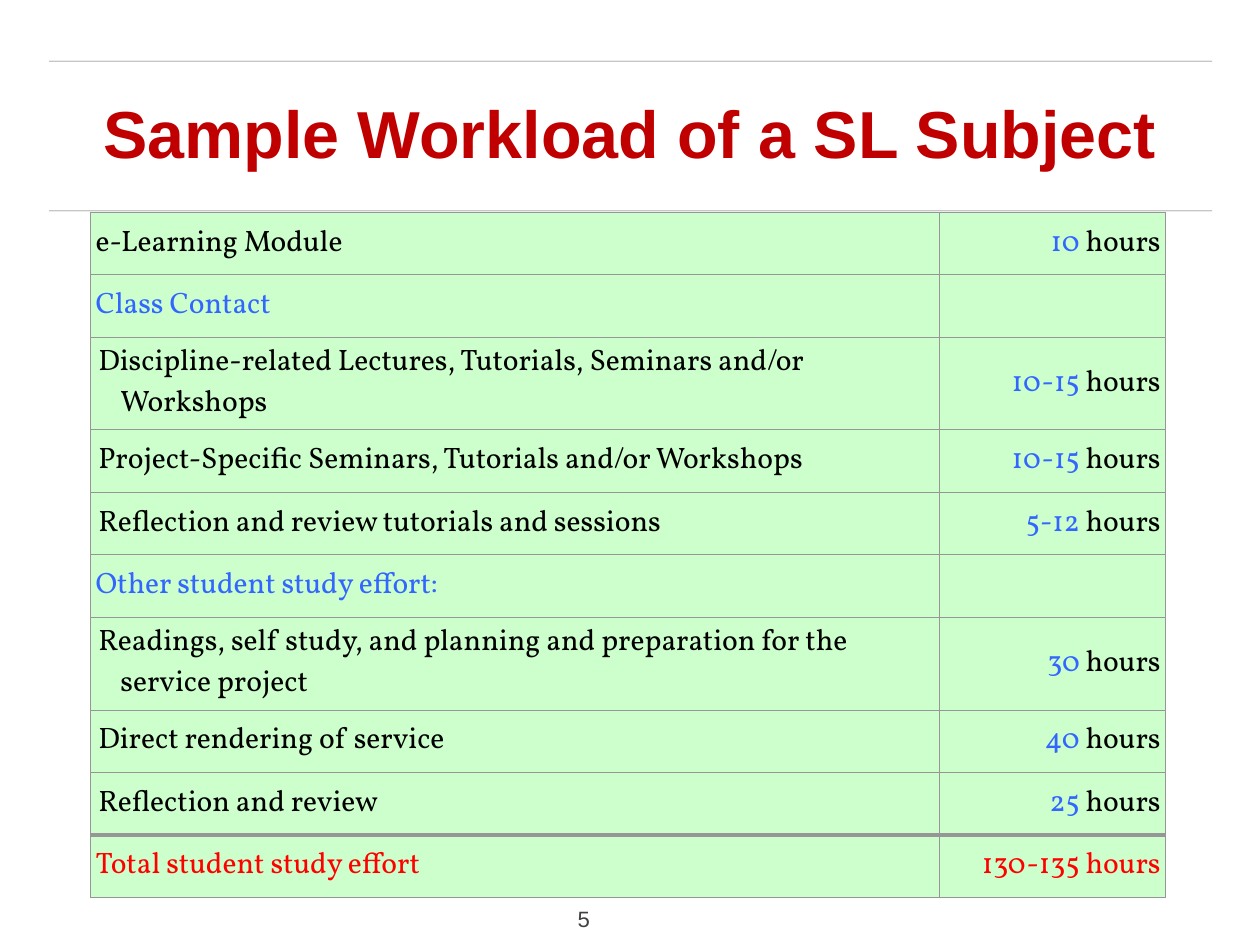
from pptx import Presentation
from pptx.dml.color import RGBColor
from pptx.enum.shapes import MSO_CONNECTOR
from pptx.enum.text import MSO_ANCHOR, MSO_AUTO_SIZE, PP_ALIGN
from pptx.oxml.ns import qn
from pptx.util import Pt
from lxml.etree import SubElement

TITLE_RED = RGBColor(0xC0, 0x00, 0x00)
TOTAL_RED = RGBColor(0xFF, 0x00, 0x00)
BLUE = RGBColor(0x33, 0x66, 0xFF)
BLACK = RGBColor(0x00, 0x00, 0x00)
GREEN = RGBColor(0xCC, 0xFF, 0xCC)
BORDER_GRAY = RGBColor(0x96, 0x96, 0x96)
RULE_GRAY = RGBColor(0x44, 0x44, 0x44)
NUMBER_GRAY = RGBColor(0x41, 0x41, 0x41)

# Kind of row, activity, figure, unit
WORKLOAD = [
    ("plain", "e-Learning Module", "10", " hours"),
    ("heading", "Class Contact", "", ""),
    ("item", "Discipline-related Lectures, Tutorials, Seminars and/or Workshops", "10-15", " hours"),
    ("item", "Project-Specific Seminars, Tutorials and/or Workshops", "10-15", " hours"),
    ("item", "Reflection and review tutorials and sessions", "5-12", " hours"),
    ("heading", "Other student study effort:", "", ""),
    ("item", "Readings, self study, and planning and preparation for the service project", "30", " hours"),
    ("item", "Direct rendering of service", "40", " hours"),
    ("item", "Reflection and review", "25", " hours"),
    ("total", "Total student study effort", "130-135", " hours"),
]
LABEL_COLORS = {"plain": BLACK, "item": BLACK, "heading": BLUE, "total": TOTAL_RED}
ROW_HEIGHT, TWO_LINE_HEIGHT = 50.8, 74.8
TWO_LINE_ROWS = (2, 6)


def add_run(paragraph, text, font_name, size, color, bold=False):
    run = paragraph.add_run()
    run.text = text
    run.font.name = font_name
    run.font.size = Pt(size)
    run.font.bold = bold
    run.font.color.rgb = color


def add_borders(cell, top, bottom):
    properties = cell._tc.get_or_add_tcPr()
    for side, width in (("L", 1), ("R", 1), ("T", top), ("B", bottom)):
        line = SubElement(properties, qn(f"a:ln{side}"), w=str(Pt(width)))
        fill = SubElement(line, qn("a:solidFill"))
        SubElement(fill, qn("a:srgbClr"), val=str(BORDER_GRAY))


presentation = Presentation()
presentation.slide_width, presentation.slide_height = Pt(1024), Pt(768)
slide = presentation.slides.add_slide(presentation.slide_layouts[5])

# Rules above and below the title
for y in (171.2, 49.8):
    rule = slide.shapes.add_connector(MSO_CONNECTOR.STRAIGHT, Pt(40), Pt(y), Pt(985), Pt(y))
    rule.line.width = Pt(1)
    rule.line.color.rgb = RULE_GRAY
    color_element = rule.line._ln.find(".//" + qn("a:srgbClr"))
    SubElement(color_element, qn("a:alpha"), val="30000")
    SubElement(rule._element.spPr, qn("a:effectLst"))

# Title
title = slide.shapes.title
title.left, title.top, title.width, title.height = Pt(40), Pt(63.4), Pt(944), Pt(96)
frame = title.text_frame
frame.auto_size = MSO_AUTO_SIZE.NONE
frame.word_wrap = True
frame.vertical_anchor = MSO_ANCHOR.MIDDLE
frame.margin_left = frame.margin_right = frame.margin_top = frame.margin_bottom = 0
paragraph = frame.paragraphs[0]
paragraph.alignment = PP_ALIGN.CENTER
paragraph.line_spacing = 0.9
add_run(paragraph, "Sample Workload of a SL Subject", "Arial", 54, TITLE_RED, bold=True)

# Workload table
table = slide.shapes.add_table(
    len(WORKLOAD), 2, Pt(73.4), Pt(172.5), Pt(874.1), Pt(556)).table
table.first_row = table.horz_banding = False
table.columns[0].width, table.columns[1].width = Pt(690.5), Pt(183.6)
last = len(WORKLOAD) - 1

for index, (kind, activity, figure, unit) in enumerate(WORKLOAD):
    table.rows[index].height = Pt(TWO_LINE_HEIGHT if index in TWO_LINE_ROWS else ROW_HEIGHT)
    activity_cell, hours_cell = table.cell(index, 0), table.cell(index, 1)
    for cell in (activity_cell, hours_cell):
        add_borders(cell, 4 if index == last else 1, 4 if index == last - 1 else 1)
        cell.fill.solid()
        cell.fill.fore_color.rgb = GREEN
        cell.vertical_anchor = MSO_ANCHOR.MIDDLE
        cell.margin_left = cell.margin_right = Pt(4.3)
        cell.margin_top = cell.margin_bottom = Pt(4.3)

    paragraph = activity_cell.text_frame.paragraphs[0]
    if kind == "item":
        paragraph_properties = paragraph._p.get_or_add_pPr()
        paragraph_properties.set("marL", str(Pt(20.2)))
        paragraph_properties.set("indent", str(Pt(-18)))
    add_run(paragraph, activity, "Vollkorn", 24, LABEL_COLORS[kind])

    if figure:
        paragraph = hours_cell.text_frame.paragraphs[0]
        paragraph.alignment = PP_ALIGN.RIGHT
        if kind == "total":
            add_run(paragraph, figure + unit, "Vollkorn", 24, TOTAL_RED)
        else:
            add_run(paragraph, figure, "Vollkorn", 24, BLUE)
            add_run(paragraph, unit, "Vollkorn", 24, BLACK)

# Slide number
number = slide.shapes.add_textbox(Pt(457.2), Pt(730.8), Pt(34.6), Pt(28.8))
frame = number.text_frame
frame.word_wrap = True
frame.margin_left = frame.margin_right = Pt(10)
frame.margin_top = frame.margin_bottom = Pt(5)
frame.paragraphs[0].alignment = PP_ALIGN.CENTER
add_run(frame.paragraphs[0], "5", "Arial", 18, NUMBER_GRAY)

presentation.save("out.pptx")
